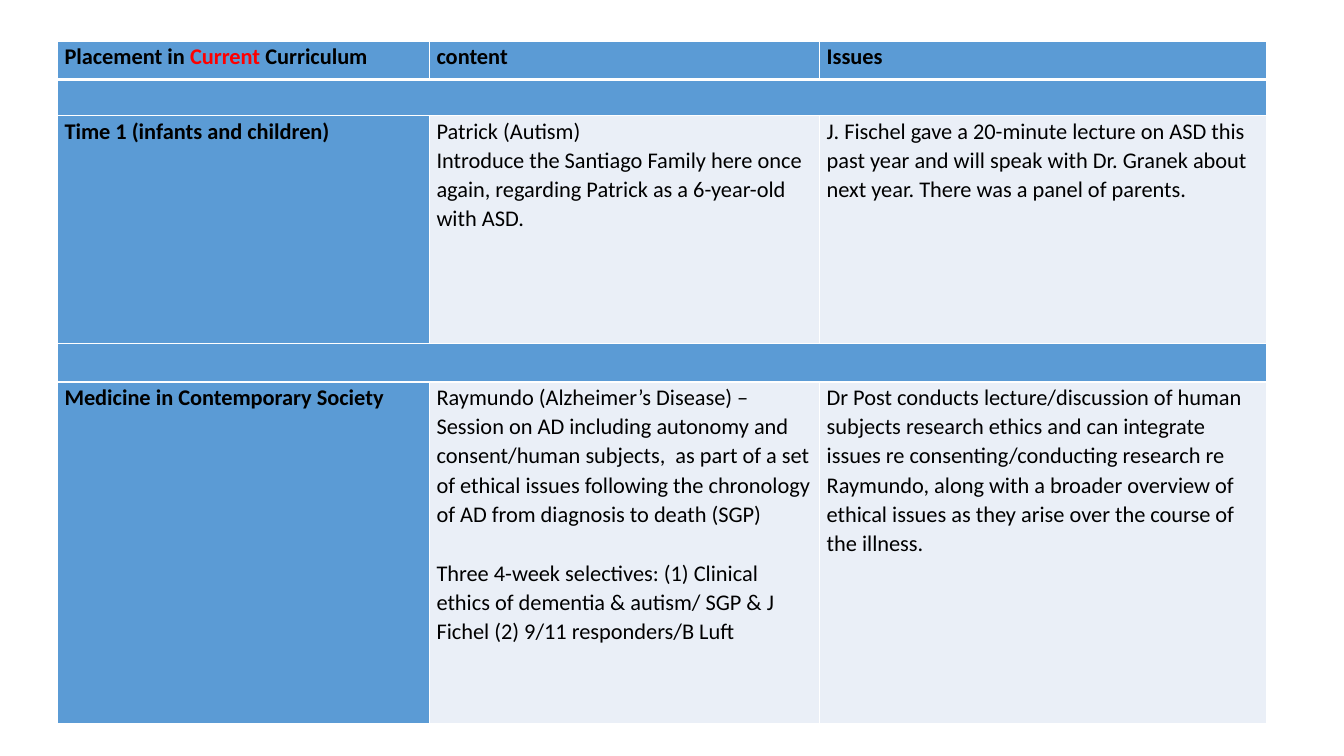
from lxml import etree
from pptx import Presentation
from pptx.dml.color import RGBColor
from pptx.oxml.ns import qn
from pptx.util import Inches, Pt

BLUE = RGBColor(0x5B, 0x9B, 0xD5)
PALE = RGBColor(0xEA, 0xEF, 0xF7)
WHITE = RGBColor(0xFF, 0xFF, 0xFF)
BLACK = RGBColor(0, 0, 0)
RED = RGBColor(0xFF, 0, 0)

COL_WIDTHS = [3.69, 3.87, 4.43]
ROW_HEIGHTS = [0.38, 0.36, 2.26, 0.38, 3.39]
BAND_ROWS = (1, 3)
PARAGRAPH_GAP = Pt(21)

# Each cell is a list of paragraphs; each paragraph is a list of (text, colour) runs.
HEADER = [
    [[("Placement in ", BLACK), ("Current", RED), (" Curriculum", BLACK)]],
    [[("content", BLACK)]],
    [[("Issues", BLACK)]],
]
TIME_1 = [
    [[("Time 1 (infants and children)", BLACK)]],
    [[("Patrick (Autism)", BLACK)],
     [("Introduce the Santiago Family here once again, regarding Patrick "
       "as a 6-year-old with ASD.", BLACK)]],
    [[("J. Fischel gave a 20-minute lecture on ASD this past year and will "
       "speak with Dr. Granek about next year. There was a panel of parents.",
       BLACK)]],
]
MEDICINE = [
    [[("Medicine in Contemporary Society", BLACK)]],
    [[("Raymundo (Alzheimer’s Disease) – Session on AD including autonomy and "
       "consent/human subjects,  as part of a set of ethical issues following "
       "the chronology of AD from diagnosis to death (SGP)", BLACK)],
     [("Three 4-week selectives: (1) Clinical ethics of dementia & autism/ "
       "SGP & J Fichel (2) 9/11 responders/B Luft", BLACK)]],
    [[("Dr Post conducts lecture/discussion of human subjects research ethics "
       "and can integrate issues re consenting/conducting research re "
       "Raymundo, along with a broader overview of ethical issues as they "
       "arise over the course of the illness.", BLACK)]],
]
TEXT_ROWS = {0: HEADER, 2: TIME_1, 4: MEDICINE}


def set_borders(cell, top=1, bottom=1):
    """Draw white borders, widths in points; the lines precede the fill."""
    tcPr = cell._tc.get_or_add_tcPr()
    widths = {"a:lnL": 1, "a:lnR": 1, "a:lnT": top, "a:lnB": bottom}
    for i, (tag, width) in enumerate(widths.items()):
        ln = etree.Element(qn(tag), w=str(Pt(width)))
        fill = etree.SubElement(ln, qn("a:solidFill"))
        etree.SubElement(fill, qn("a:srgbClr"), val=str(WHITE))
        tcPr.insert(i, ln)


def style_cell(cell, fill, top, bottom):
    cell.margin_left = cell.margin_right = Inches(0.07)
    cell.margin_top = cell.margin_bottom = 0
    cell.fill.solid()
    cell.fill.fore_color.rgb = fill
    set_borders(cell, top, bottom)


def write_cell(cell, paragraphs, bold):
    tf = cell.text_frame
    for i, runs in enumerate(paragraphs):
        p = tf.add_paragraph() if i else tf.paragraphs[0]
        p.line_spacing = 1.07
        for content, colour in runs:
            r = p.add_run()
            r.text = content
            r.font.name = "Calibri"
            r.font.size = Pt(16)
            r.font.bold = bold
            r.font.color.rgb = colour


def add_curriculum_table(s):
    frame = s.shapes.add_table(
        len(ROW_HEIGHTS), len(COL_WIDTHS), Inches(0.57), Inches(0.41),
        Inches(sum(COL_WIDTHS)), Inches(sum(ROW_HEIGHTS)))
    table = frame.table
    for column, width in zip(table.columns, COL_WIDTHS):
        column.width = Inches(width)
    for row, height in zip(table.rows, ROW_HEIGHTS):
        row.height = Inches(height)

    for i, row in enumerate(table.rows):
        for j, cell in enumerate(row.cells):
            is_label = i == 0 or j == 0
            fill = BLUE if is_label or i in BAND_ROWS else PALE
            style_cell(cell, fill, 3 if i == 1 else 1, 3 if i == 0 else 1)
            if i in TEXT_ROWS:
                write_cell(cell, TEXT_ROWS[i][j], is_label)
    for i in BAND_ROWS:
        table.cell(i, 0).merge(table.cell(i, len(COL_WIDTHS) - 1))
    return table


def main():
    prs = Presentation()
    prs.slide_width, prs.slide_height = Inches(13.33), Inches(7.5)
    s = prs.slides.add_slide(prs.slide_layouts[6])
    table = add_curriculum_table(s)
    selectives = table.cell(4, 1).text_frame.paragraphs[1]
    selectives.space_before = PARAGRAPH_GAP
    prs.save("out.pptx")


if __name__ == "__main__":
    main()
